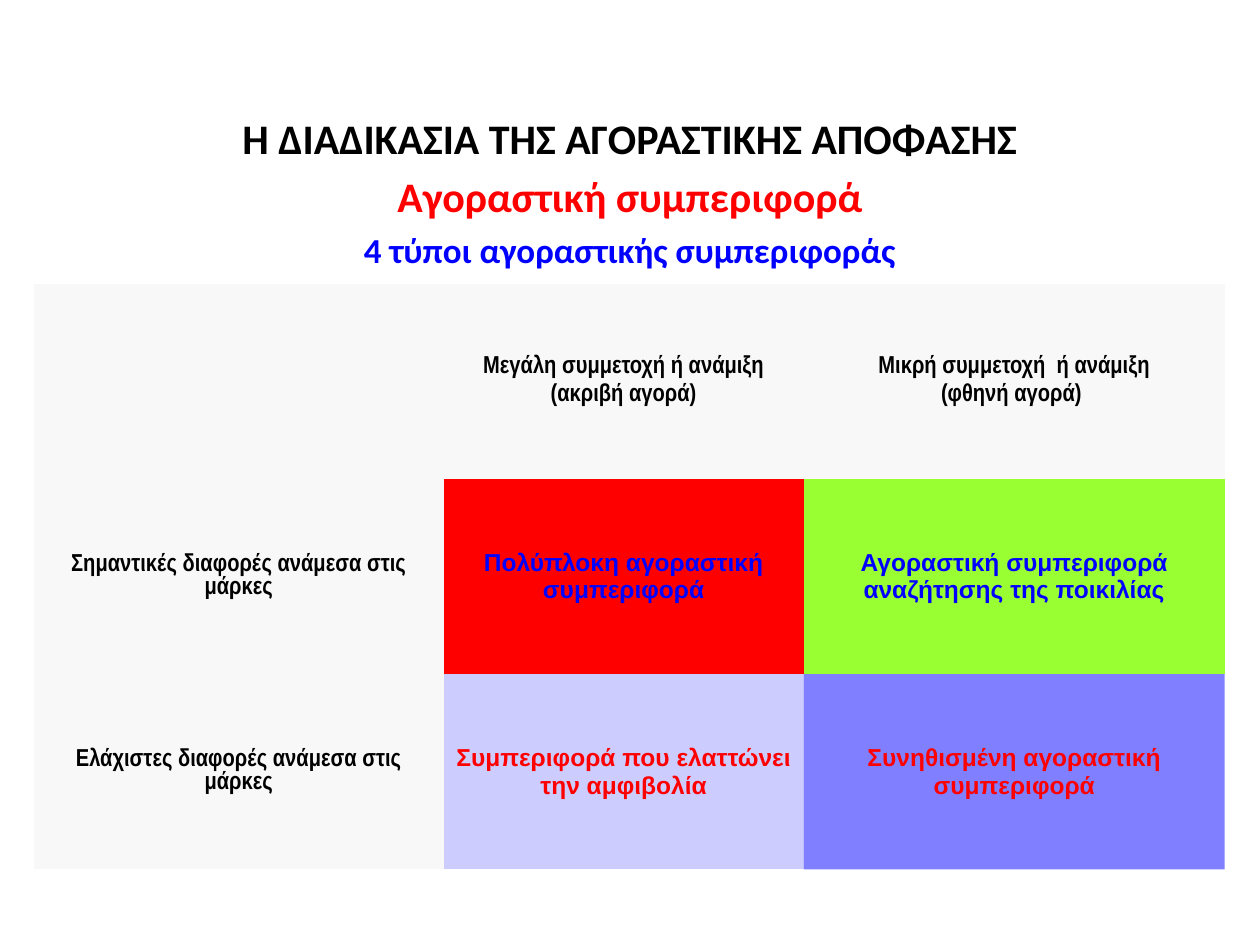
from lxml.etree import SubElement
from pptx import Presentation
from pptx.dml.color import RGBColor
from pptx.enum.text import MSO_ANCHOR, PP_ALIGN
from pptx.oxml.ns import qn
from pptx.util import Inches, Pt

BLACK, RED, BLUE, PALE = "000000", "FF0000", "0000FF", "F8F8F8"
NO_STYLE_NO_GRID = "{2D5ABB26-0587-4C30-8999-92F81FD0307C}"
SPACE_SHARE = 0.2  # space before a paragraph, as a share of its text size

HEADINGS = [  # text, size, colour
    ("Η ΔΙΑΔΙΚΑΣΙΑ ΤΗΣ ΑΓΟΡΑΣΤΙΚΗΣ ΑΠΟΦΑΣΗΣ", 24, BLACK),
    ("Αγοραστική συμπεριφορά", 24, RED),
    ("4 τύποι αγοραστικής συμπεριφοράς", 20, BLUE),
]

COLUMN_WIDTHS = [3.25, 2.86, 3.34]
ROW_HEIGHTS = [1.55] * 3
LABEL = ("Arial Narrow", BLACK, PALE, 100)
CELLS = [  # paragraphs, (font, text colour, fill, opacity in percent)
    [
        ([], LABEL),
        (["Μεγάλη συμμετοχή ή ανάμιξη", "(ακριβή αγορά)"], LABEL),
        (["Μικρή συμμετοχή  ή ανάμιξη", "(φθηνή αγορά) "], LABEL),
    ],
    [
        (["Σημαντικές διαφορές ανάμεσα στις μάρκες"], LABEL),
        (["Πολύπλοκη αγοραστική συμπεριφορά"], ("Arial", BLUE, RED, 100)),
        (["Αγοραστική συμπεριφορά αναζήτησης της ποικιλίας"],
         ("Arial", BLUE, "99FF33", 100)),
    ],
    [
        (["Ελάχιστες διαφορές ανάμεσα στις μάρκες"], LABEL),
        (["Συμπεριφορά που ελαττώνει την αμφιβολία"],
         ("Arial", RED, "CCCCFF", 100)),
        (["Συνηθισμένη αγοραστική συμπεριφορά"], ("Arial", RED, BLUE, 50)),
    ],
]


def color(hex_value):
    return RGBColor.from_string(hex_value)


def write_paragraphs(text_frame, lines):
    """Fill the frame with centred bold lines of (text, font, size, colour)."""
    text_frame.text = "\n".join(line[0] for line in lines)
    for index, (paragraph, line) in enumerate(zip(text_frame.paragraphs, lines)):
        _, font_name, size, hex_value = line
        paragraph.alignment = PP_ALIGN.CENTER
        paragraph.space_before = Pt(size * SPACE_SHARE if index else 0)
        for run in paragraph.runs:
            run.font.name = font_name
            run.font.size = Pt(size)
            run.font.bold = True
            run.font.color.rgb = color(hex_value)


def fill_cell(cell, hex_value, opacity):
    cell.fill.solid()
    cell.fill.fore_color.rgb = color(hex_value)
    if opacity < 100:
        for element in cell.fill._xPr.iter(qn("a:srgbClr")):
            SubElement(element, qn("a:alpha")).set("val", str(opacity * 1000))


def add_headings(slide):
    box = slide.shapes.add_textbox(0, Inches(0.84), Inches(10), Inches(6.38))
    box.text_frame.word_wrap = True
    write_paragraphs(
        box.text_frame,
        [(text, "Calibri", size, hex_value) for text, size, hex_value in HEADINGS],
    )


def add_behaviour_table(slide):
    frame = slide.shapes.add_table(
        len(ROW_HEIGHTS), len(COLUMN_WIDTHS), Inches(0.27), Inches(2.25),
        Inches(sum(COLUMN_WIDTHS)), Inches(sum(ROW_HEIGHTS)),
    )
    table = frame.table
    table.first_row = table.horz_banding = False
    for style in frame.element.iter(qn("a:tableStyleId")):
        style.text = NO_STYLE_NO_GRID
    for column, width in zip(table.columns, COLUMN_WIDTHS):
        column.width = Inches(width)
    for row, height, contents in zip(table.rows, ROW_HEIGHTS, CELLS):
        row.height = Inches(height)
        for cell, (texts, look) in zip(row.cells, contents):
            font_name, text_color, fill, opacity = look
            cell.vertical_anchor = MSO_ANCHOR.MIDDLE
            fill_cell(cell, fill, opacity)
            write_paragraphs(
                cell.text_frame,
                [(text, font_name, 14, text_color) for text in texts],
            )


def main():
    presentation = Presentation()
    presentation.slide_width = Inches(10)
    presentation.slide_height = Inches(7.5)
    slide = presentation.slides.add_slide(presentation.slide_layouts[6])
    add_headings(slide)
    add_behaviour_table(slide)
    presentation.save("out.pptx")


if __name__ == "__main__":
    main()
